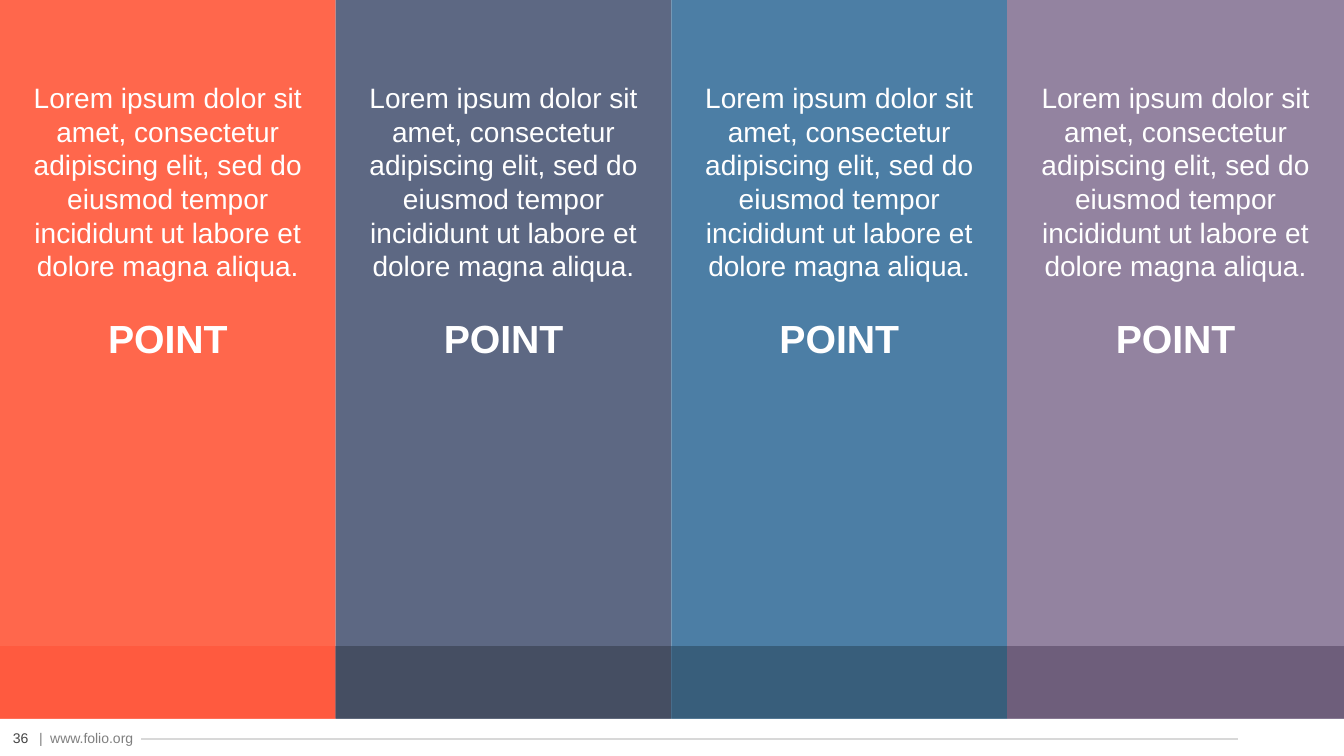
from lxml import etree
from pptx import Presentation
from pptx.dml.color import RGBColor
from pptx.enum import shapes, text
from pptx.oxml.ns import qn
from pptx.util import Inches, Pt

FONT = "Arial"
COLORS = {
    "white": "FFFFFF",
    "site": "7F7F7F",
    "number": "454545",
    "rule": "D8D8D8",
}
# Panel colour and the darker colour of its base band
COLUMNS = [
    ("FF674C", "FF5A3F"),
    ("5D6883", "454E62"),
    ("4C7EA5", "385E7B"),
    ("9383A0", "6E5E7B"),
]
BODY = ("Lorem ipsum dolor sit amet, consectetur adipiscing elit, "
        "sed do eiusmod tempor incididunt ut labore et dolore magna aliqua.")
SLIDE_W, SLIDE_H = 13.33, 7.5
COLUMN_W = 3.33
PANEL_H, BAND_H = 7.13, 0.72


def add_run(p, words, size, color, bold=False):
    r = p.add_run()
    r.text = words
    r.font.name = FONT
    r.font.size = Pt(size)
    r.font.bold = bold
    r.font.color.rgb = RGBColor.from_string(color)


def set_frame(tf, margins, anchor):
    tf.word_wrap = True
    tf.vertical_anchor = anchor
    tf.margin_left, tf.margin_top, tf.margin_right, tf.margin_bottom = map(Inches, margins)


def add_block(s, x, y, w, h, color):
    sp = s.shapes.add_shape(shapes.MSO_SHAPE.RECTANGLE,
                            Inches(x), Inches(y), Inches(w), Inches(h))
    sp.shadow.inherit = False
    sp.fill.solid()
    sp.fill.fore_color.rgb = RGBColor.from_string(color)
    sp.line.fill.background()
    return sp


def add_panel(s, x, w, color):
    tf = add_block(s, x, 0, w, PANEL_H, color).text_frame
    set_frame(tf, (0.2, 0.8, 0.2, 0.03), text.MSO_ANCHOR.TOP)
    p = tf.paragraphs[0]
    p.alignment = text.PP_ALIGN.CENTER
    add_run(p, BODY, 20, COLORS["white"])
    p = tf.add_paragraph()
    p.alignment = text.PP_ALIGN.CENTER
    p.space_before = Pt(23)
    add_run(p, "POINT", 28, COLORS["white"], bold=True)


def add_label(s, x, w, words, color, align, anchor, tab=None):
    sp = s.shapes.add_textbox(Inches(x), Inches(7.19), Inches(w), Inches(0.27))
    set_frame(sp.text_frame, (0.1, 0.05, 0.1, 0.05), anchor)
    p = sp.text_frame.paragraphs[0]
    p.alignment = align
    if tab:
        tabs = etree.SubElement(p._p.get_or_add_pPr(), qn("a:tabLst"))
        etree.SubElement(tabs, qn("a:tab"), pos=str(Inches(tab)), algn="l")
    add_run(p, words, 10, color)


def add_rule(s, x1, x2, y):
    line = s.shapes.add_connector(shapes.MSO_CONNECTOR.STRAIGHT,
                                  Inches(x1), Inches(y), Inches(x2), Inches(y))
    line.line.color.rgb = RGBColor.from_string(COLORS["rule"])
    line.line.width = Pt(1)
    etree.SubElement(line._element.spPr, qn("a:effectLst"))


def main():
    prs = Presentation()
    prs.slide_width, prs.slide_height = Inches(SLIDE_W), Inches(SLIDE_H)
    s = prs.slides.add_slide(prs.slide_layouts[6])

    # Footer
    add_label(s, 0.29, 1.94, "|\twww.folio.org", COLORS["site"],
              text.PP_ALIGN.LEFT, text.MSO_ANCHOR.TOP, tab=0.11)
    add_label(s, -0.04, 0.49, "36", COLORS["number"],
              text.PP_ALIGN.CENTER, text.MSO_ANCHOR.MIDDLE)
    add_rule(s, 1.4, 12.28, 7.33)

    # Columns: the last one runs to the slide edge
    for i, (panel, band) in enumerate(COLUMNS):
        x = i * COLUMN_W
        w = SLIDE_W - x if i == len(COLUMNS) - 1 else COLUMN_W
        add_panel(s, x, w, panel)
        add_block(s, x, PANEL_H - BAND_H, w, BAND_H, band)

    prs.save("out.pptx")


if __name__ == "__main__":
    main()
